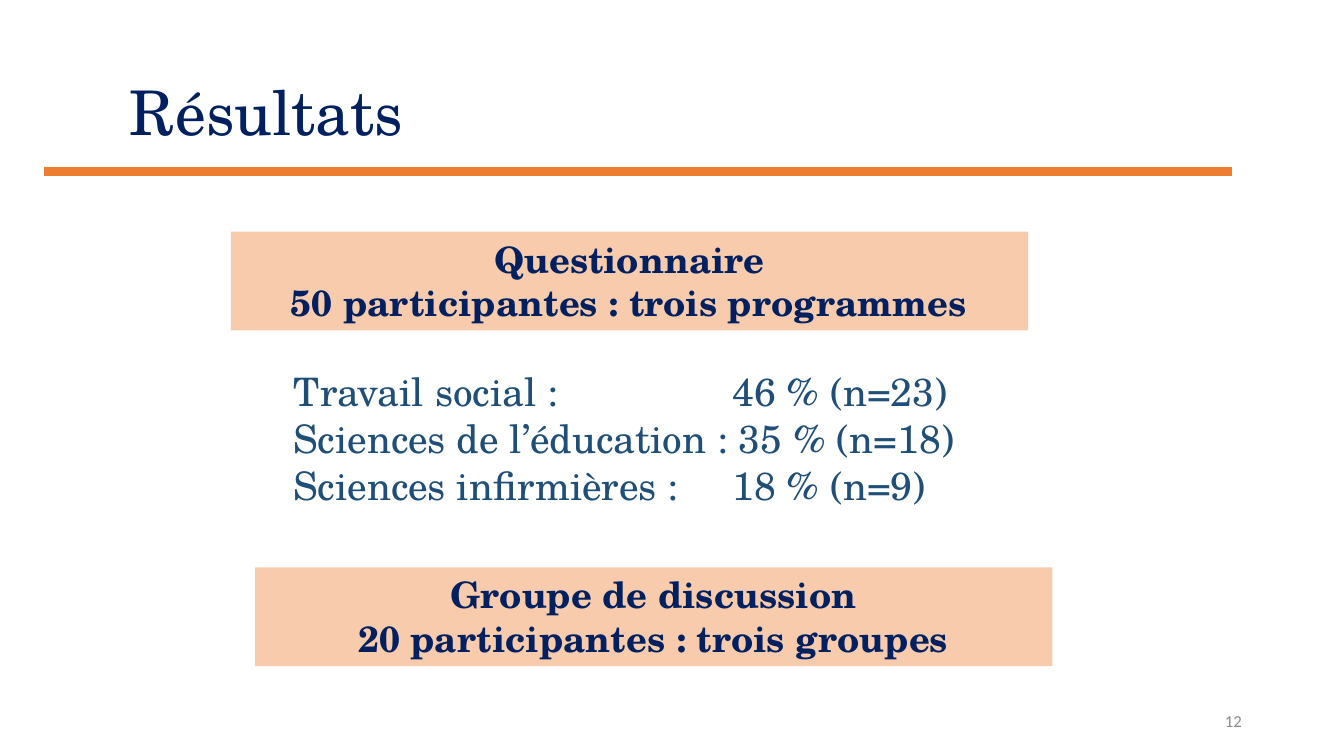
from lxml import etree
from pptx import Presentation
from pptx.dml.color import RGBColor
from pptx.enum.shapes import MSO_CONNECTOR, MSO_SHAPE
from pptx.enum.text import MSO_ANCHOR, MSO_AUTO_SIZE, PP_ALIGN
from pptx.oxml.ns import qn
from pptx.util import Cm, Pt

STRAIGHT = MSO_CONNECTOR.STRAIGHT
RECTANGLE = MSO_SHAPE.RECTANGLE
TOP, MIDDLE = MSO_ANCHOR.TOP, MSO_ANCHOR.MIDDLE
LEFT, CENTER, RIGHT = PP_ALIGN.LEFT, PP_ALIGN.CENTER, PP_ALIGN.RIGHT
FIXED, GROW = MSO_AUTO_SIZE.NONE, MSO_AUTO_SIZE.SHAPE_TO_FIT_TEXT

COLORS = {
    "navy": "002060",
    "blue": "1F4E79",
    "orange": "ED7D31",
    "peach": "F8CBAD",
    "gray": "8C8C8C",
}
SERIF, SANS = "TeX Gyre Schola", "Calibri"
BANNER_WIDTH, BANNER_HEIGHT = 20.09, 2.49
TITLE_STYLE = {"size": Pt(44), "name": SERIF, "bold": False}
BANNER_STYLE = {"size": Pt(26), "name": SERIF, "bold": True}
LIST_STYLE = {"size": Pt(28), "name": SERIF}
NUMBER_STYLE = {"size": Pt(12), "name": SANS}


class SlideBuilder:
    def __init__(self, deck):
        self.slide = deck.slides.add_slide(deck.slide_layouts[5])
        self.shapes = self.slide.shapes

    def color(self, name):
        return RGBColor.from_string(COLORS[name])

    def fill_text(self, box, lines, style, color, align=LEFT, anchor=TOP,
                  fit=FIXED, spacing=1.0, tab=None):
        frame = box.text_frame
        settings = {"word_wrap": True, "auto_size": fit, "vertical_anchor": anchor}
        for key, value in settings.items():
            setattr(frame, key, value)
        for index, line in enumerate(lines):
            para = frame.add_paragraph() if index else frame.paragraphs[0]
            para.alignment = align
            para.line_spacing = spacing
            if tab:
                stops = etree.SubElement(para._p.get_or_add_pPr(), qn("a:tabLst"))
                etree.SubElement(stops, qn("a:tab"), pos=str(Cm(tab)), algn="l")
            span = para.add_run()
            span.text = line
            for key, value in style.items():
                setattr(span.font, key, value)
            span.font.color.rgb = self.color(color)

    def title(self, text, left, top, width, height):
        box = self.shapes.title
        place = {"left": left, "top": top, "width": width, "height": height}
        for key, value in place.items():
            setattr(box, key, Cm(value))
        self.fill_text(box, [text], TITLE_STYLE, "navy", anchor=MIDDLE, spacing=0.9)

    def rule(self, left, right, top, color, weight):
        line = self.shapes.add_connector(STRAIGHT, Cm(left), Cm(top), Cm(right), Cm(top))
        line.line.color.rgb = self.color(color)
        line.line.width = Pt(weight)
        etree.SubElement(line._element.spPr, qn("a:effectLst"))

    def banner(self, lines, left, top):
        box = self.shapes.add_shape(RECTANGLE, Cm(left), Cm(top),
                                    Cm(BANNER_WIDTH), Cm(BANNER_HEIGHT))
        box.shadow.inherit = False
        box.fill.solid()
        box.fill.fore_color.rgb = self.color("peach")
        box.line.fill.background()
        self.fill_text(box, lines, BANNER_STYLE, "navy", align=CENTER, fit=GROW)

    def text(self, lines, left, top, width, height, style, color, **layout):
        box = self.shapes.add_textbox(Cm(left), Cm(top), Cm(width), Cm(height))
        self.fill_text(box, lines, style, color, **layout)


def main():
    deck = Presentation()
    deck.slide_width, deck.slide_height = Cm(33.87), Cm(19.05)
    page = SlideBuilder(deck)
    page.title("Résultats", 3.02, 1.63, 26.14, 2.54)
    page.rule(1.12, 31.06, 4.32, "orange", 6)
    page.banner(["Questionnaire", "50 participantes : trois programmes"], 5.82, 5.84)
    programmes = [
        "Travail social :\t46 % (n=23)",
        "Sciences de l’éducation : 35 % (n=18)",
        "Sciences infirmières :\t18 % (n=9)",
    ]
    page.text(programmes, 7.14, 9.14, BANNER_WIDTH, 3.84, LIST_STYLE, "blue",
              fit=GROW, tab=11.07)
    page.banner(["Groupe de discussion", "20 participantes : trois groupes"], 6.43, 14.3)
    page.text(["12"], 23.93, 17.65, 7.62, 1.02, NUMBER_STYLE, "gray",
              align=RIGHT, anchor=MIDDLE)
    deck.save("out.pptx")


if __name__ == "__main__":
    main()
